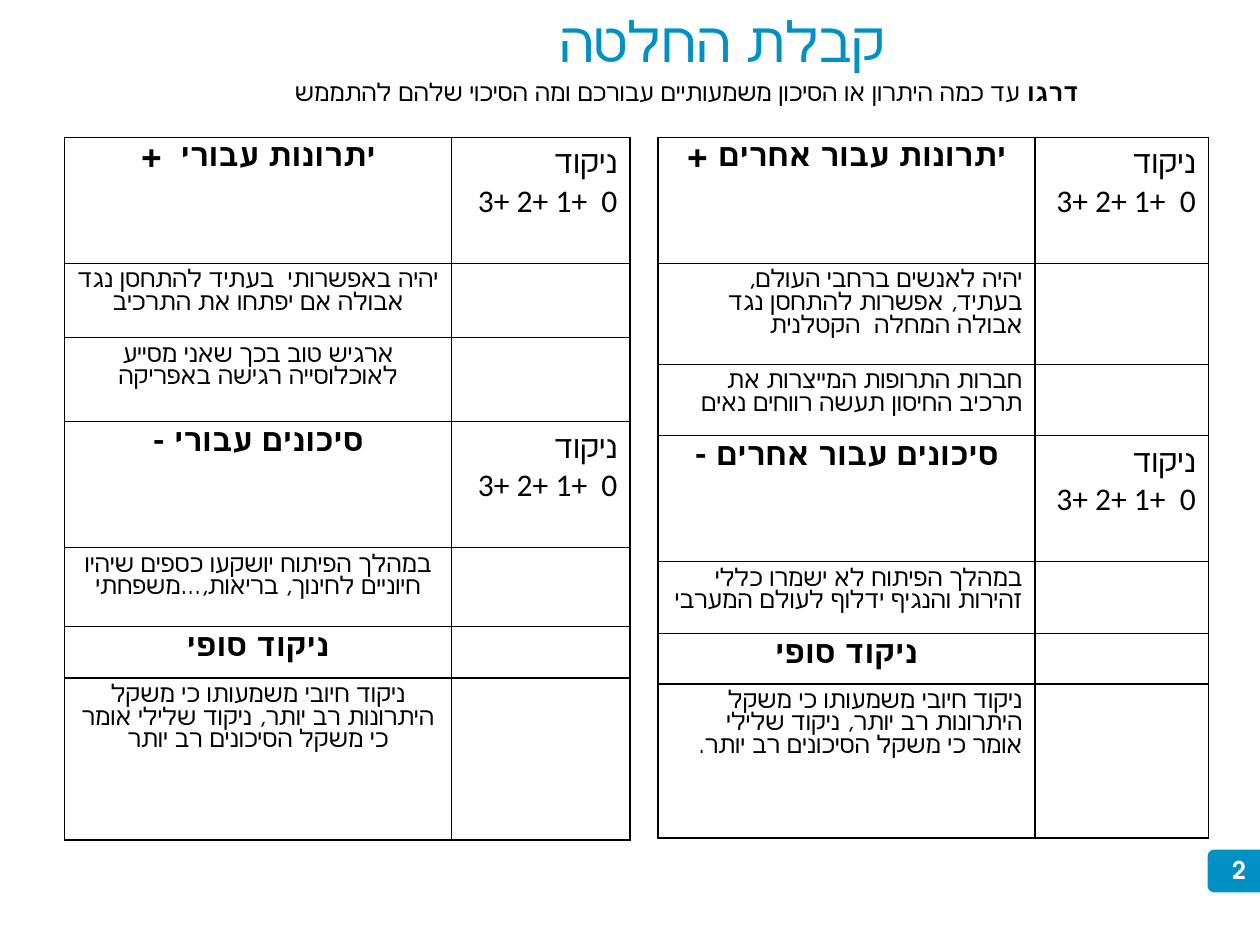
from lxml.etree import SubElement
from pptx import Presentation
from pptx.dml.color import RGBColor
from pptx.enum.shapes import MSO_SHAPE as Shape
from pptx.enum.text import MSO_ANCHOR as Anchor, PP_ALIGN as Align
from pptx.oxml.ns import qn
from pptx.util import Pt

COLORS = {"accent": "0091C4", "ink": "000000", "paper": "FFFFFF"}
MAIN_FONT, SCORE_FONT = "TeX Gyre Adventor", "Calibri"
SCORE = "ניקוד\v0  +1 +2 +3"
FINAL = "ניקוד סופי"
VERDICT = ("ניקוד חיובי משמעותו כי משקל היתרונות רב יותר, "
           "ניקוד שלילי אומר כי משקל הסיכונים רב יותר")

# Each row: kind, text, height
OTHERS_ROWS = [
    ("head", "יתרונות עבור אחרים +", 72),
    ("item", "יהיה לאנשים ברחבי העולם, בעתיד, אפשרות להתחסן נגד אבולה המחלה  הקטלנית", 57.5),
    ("item", "חברות התרופות המייצרות את תרכיב החיסון תעשה רווחים נאים", 40.5),
    ("head", "סיכונים עבור אחרים -", 72),
    ("item", "במהלך הפיתוח לא ישמרו כללי זהירות והנגיף ידלוף לעולם המערבי", 41),
    ("final", FINAL, 28.5),
    ("item", VERDICT + ".", 88),
]
SELF_ROWS = [
    ("head", "יתרונות עבורי  +", 72),
    ("item", "יהיה באפשרותי  בעתיד להתחסן נגד אבולה אם יפתחו את התרכיב", 42.5),
    ("item", "ארגיש טוב בכך שאני מסייע לאוכלוסייה רגישה באפריקה", 48),
    ("head", "סיכונים עבורי -", 72),
    ("item", "במהלך הפיתוח יושקעו כספים שיהיו חיוניים לחינוך, בריאות,...משפחתי", 45),
    ("final", FINAL, 29.5),
    ("item", VERDICT, 92.5),
]


def color(name):
    return RGBColor.from_string(COLORS[name])


def write(frame, text, size=14, font=MAIN_FONT, ink="ink", bold=False,
          align=Align.RIGHT, rtl=True, lead=""):
    """Fill the first paragraph; lead is an optional bold opening."""
    paragraph = frame.paragraphs[0]
    paragraph.alignment = align
    paragraph._p.get_or_add_pPr().set("rtl", "1" if rtl else "0")
    if lead:
        add_run(paragraph, lead, size, font, ink, True)
    for index, line in enumerate(text.split("\v")):
        if index:
            paragraph.add_line_break()
        add_run(paragraph, line, size, font, ink, bold)


def add_run(paragraph, text, size, font, ink, bold):
    run = paragraph.add_run()
    run.text = text
    run.font.size = Pt(size)
    run.font.bold = bold
    run.font.color.rgb = color(ink)
    run.font.name = font
    SubElement(run._r.get_or_add_rPr(), qn("a:cs"), typeface=font)


def outline_cell(cell):
    properties = cell._tc.get_or_add_tcPr()
    for side in ("a:lnL", "a:lnR", "a:lnT", "a:lnB"):
        line = SubElement(properties, qn(side), w=str(Pt(1)))
        fill = SubElement(line, qn("a:solidFill"))
        SubElement(fill, qn("a:srgbClr"), val=COLORS["ink"])
    cell.fill.background()


def place(shape, box):
    shape.left, shape.top, shape.width, shape.height = map(Pt, box)


def add_heading(slide, title_box, prompt_box):
    title = slide.shapes.title
    place(title, title_box)
    title.text_frame.vertical_anchor = Anchor.TOP
    write(title.text_frame, "קבלת החלטה", size=32, ink="accent")

    prompt = slide.shapes.add_textbox(*map(Pt, prompt_box)).text_frame
    prompt.word_wrap = True
    prompt.vertical_anchor = Anchor.MIDDLE
    write(prompt, " עד כמה היתרון או הסיכון משמעותיים עבורכם ומה הסיכוי שלהם להתממש",
          lead="דרגו")


def add_score_table(slide, left, top, widths, rows, item_align, item_rtl):
    height = sum(row[2] for row in rows)
    table = slide.shapes.add_table(len(rows), 2, Pt(left), Pt(top),
                                   Pt(sum(widths)), Pt(height)).table
    table.first_row = table.horz_banding = False
    for column, width in zip(table.columns, widths):
        column.width = Pt(width)
    for index, (kind, text, row_height) in enumerate(rows):
        table.rows[index].height = Pt(row_height)
        label, score = table.cell(index, 0), table.cell(index, 1)
        if kind == "item":
            write(label.text_frame, text, align=item_align, rtl=item_rtl)
        else:
            write(label.text_frame, text, size=18, bold=True, align=Align.CENTER)
        if kind == "head":
            write(score.text_frame, SCORE, size=18, font=SCORE_FONT)
        outline_cell(label)
        outline_cell(score)


def add_page_number(slide, left, top, height):
    # The tab runs past the slide's right edge, hiding its right corners
    tab = slide.shapes.add_shape(Shape.ROUNDED_RECTANGLE, Pt(left), Pt(top),
                                 Pt(85), Pt(height))
    tab.adjustments[0] = 0.16
    tab.shadow.inherit = False
    tab.fill.solid()
    tab.fill.fore_color.rgb = color("accent")
    tab.line.fill.background()

    number = slide.shapes.add_textbox(Pt(left), Pt(top + 3), Pt(36), Pt(17)).text_frame
    number.margin_left = number.margin_right = 0
    number.margin_top = number.margin_bottom = 0
    number.vertical_anchor = Anchor.MIDDLE
    number.word_wrap = True
    write(number, "2", ink="paper", bold=True, align=Align.CENTER, rtl=False)


def main():
    presentation = Presentation()
    presentation.slide_width, presentation.slide_height = Pt(720), Pt(540)
    slide = presentation.slides.add_slide(presentation.slide_layouts[5])

    add_page_number(slide, 690, 485.5, 24.5)
    # Scores for others on the right, for oneself on the left
    add_score_table(slide, 376, 78.5, (215.5, 99), OTHERS_ROWS, Align.RIGHT, True)
    add_score_table(slide, 37, 78.5, (221, 102), SELF_ROWS, Align.CENTER, False)
    add_heading(slide, (145, 0, 368.5, 46), (36.5, 23, 587, 58.5))
    presentation.save("out.pptx")


if __name__ == "__main__":
    main()
